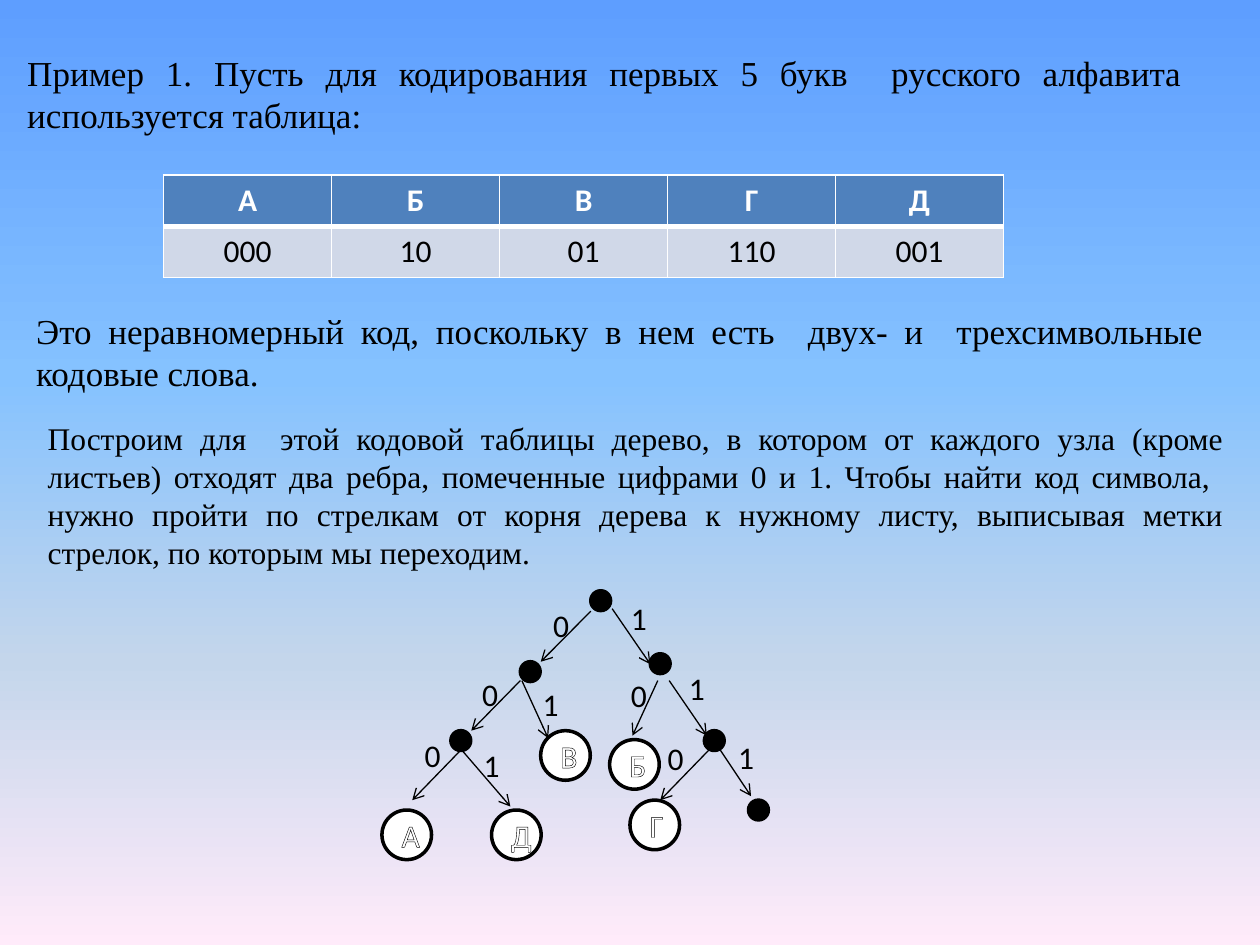
from pptx import Presentation
from pptx.dml.color import RGBColor
from pptx.enum.shapes import MSO_CONNECTOR, MSO_SHAPE
from pptx.enum.text import MSO_ANCHOR, MSO_AUTO_SIZE, PP_ALIGN
from pptx.oxml.ns import qn
from pptx.oxml.xmlchemy import OxmlElement
from pptx.util import Cm, Pt

ELLIPSE = MSO_SHAPE.OVAL
STRAIGHT = MSO_CONNECTOR.STRAIGHT
MIDDLE = MSO_ANCHOR.MIDDLE
FIT_SHAPE = MSO_AUTO_SIZE.SHAPE_TO_FIT_TEXT
LEFT, CENTER, JUSTIFY = PP_ALIGN.LEFT, PP_ALIGN.CENTER, PP_ALIGN.JUSTIFY

SERIF, SANS = "Times New Roman", "Calibri"
COLORS = {"ink": "000000", "paper": "FFFFFF", "header": "4F81BD", "row": "D0D8E8"}
SKY = [(0, "5E9EFF"), (40, "85C2FF"), (70, "C4D6EB"), (100, "FFEBFA")]

PARAGRAPHS = [
    ((0.3, 0.91, 24.21, 1.96), 20,
     "Пример 1. Пусть для кодирования первых 5 букв  русского алфавита  "
     "используется таблица:"),
    ((0.48, 6.12, 24.03, 1.96), 20,
     "Это неравномерный код, поскольку в нем есть  двух- и  трехсимвольные "
     "кодовые слова."),
    ((0.71, 8.33, 24.21, 3.33), 18,
     "Построим для  этой кодовой таблицы дерево, в котором от каждого узла "
     "(кроме листьев) отходят два ребра, помеченные цифрами 0 и 1. Чтобы найти "
     "код символа,  нужно пройти по стрелкам от корня дерева к нужному листу, "
     "выписывая метки стрелок, по которым мы переходим."),
]
CODES = {"А": "000", "Б": "10", "В": "01", "Г": "110", "Д": "001"}

DOT_SIZE, LEAF_SIZE = 0.4, 1
DOTS = [(4.21, 0), (2.79, 1.43), (5.41, 1.27), (1.39, 2.82), (6.5, 2.82), (7.39, 4.22)]
LEAVES = {"А": (0, 4.42), "Д": (2.21, 4.42), "В": (3.2, 2.82),
          "Б": (4.59, 3), "Г": (5, 4.22)}
EDGES = [
    ("0", (4.21, 0.41), (3.2, 1.43), (3.2, 0.18)),
    ("1", (4.64, 0.36), (5.41, 1.48), (4.77, 0.05)),
    ("0", (2.79, 1.81), (1.8, 2.82), (1.77, 1.58)),
    ("1", (2.82, 1.81), (3.35, 2.97), (2.99, 1.78)),
    ("0", (5.56, 1.81), (5.05, 2.92), (4.77, 1.6)),
    ("1", (5.79, 1.81), (6.55, 2.92), (5.94, 1.45)),
    ("0", (1.6, 3.2), (0.61, 4.22), (0.61, 2.8)),
    ("1", (1.6, 3.2), (2.59, 4.35), (1.8, 3)),
    ("0", (6.6, 3.2), (5.61, 4.22), (5.51, 2.87)),
    ("1", (6.7, 3.03), (7.44, 4.14), (6.93, 2.85)),
]


def rgb(name):
    """Return the palette colour called name."""
    return RGBColor.from_string(COLORS[name])


def solid_fill(color):
    """Return a solid fill element in a hex colour."""
    fill = OxmlElement("a:solidFill")
    clr = OxmlElement("a:srgbClr")
    clr.set("val", color)
    fill.append(clr)
    return fill


def solid_line(tag, width, color):
    """Return a line element of the given tag, width in points and colour."""
    ln = OxmlElement(tag)
    ln.set("w", str(Pt(width)))
    ln.append(solid_fill(color))
    return ln


def write(tf, text, size, font, color, align, bold=False):
    """Write one run into the first paragraph and return it."""
    p = tf.paragraphs[0]
    p.alignment = align
    r = p.add_run()
    r.text = text
    r.font.size, r.font.name, r.font.bold = Pt(size), font, bold
    r.font.color.rgb = rgb(color)
    return r


def add_text(slide, box, text, size, font, align, wrap=True):
    """Add a text box that grows with its text."""
    tf = slide.shapes.add_textbox(*map(Cm, box)).text_frame
    tf.word_wrap = wrap
    tf.auto_size = FIT_SHAPE
    write(tf, text, size, font, "ink", align)


def paint_background(slide):
    """Fill the slide background from sky blue down to pink."""
    fill = slide.background.fill
    fill.gradient()
    fill.gradient_angle = 270
    stops = next(slide.element.iter(qn("a:gsLst")))
    for stop in list(stops):
        stops.remove(stop)
    for pos, color in SKY:
        gs = OxmlElement("a:gs")
        gs.set("pos", str(pos * 1000))
        gs.append(solid_fill(color)[0])
        stops.append(gs)


def add_code_table(slide, box):
    """Add the table of letters and their codes."""
    rows = [list(CODES), list(CODES.values())]
    table = slide.shapes.add_table(len(rows), len(CODES), *map(Cm, box)).table
    for i, row in enumerate(rows):
        head = i == 0
        for j, text in enumerate(row):
            cell = table.cell(i, j)
            cell.fill.solid()
            cell.fill.fore_color.rgb = rgb("header" if head else "row")
            write(cell.text_frame, text, 18, SANS, "paper" if head else "ink",
                  CENTER, head)
            widths = {"L": 1, "R": 1, "T": 1 if head else 3, "B": 3 if head else 1}
            tc_pr = cell._tc.get_or_add_tcPr()
            for k, (side, width) in enumerate(widths.items()):
                tc_pr.insert(k, solid_line(f"a:ln{side}", width, COLORS["paper"]))


def add_circle(slide, x, y, size, color):
    """Add a circle with a black outline."""
    sp = slide.shapes.add_shape(ELLIPSE, Cm(x), Cm(y), Cm(size), Cm(size))
    sp.shadow.inherit = False
    sp.fill.solid()
    sp.fill.fore_color.rgb = rgb(color)
    sp.line.color.rgb = rgb("ink")
    sp.line.width = Pt(2)
    return sp


def add_arrow(slide, x1, y1, x2, y2):
    """Add a thin straight arrow."""
    cn = slide.shapes.add_connector(STRAIGHT, Cm(x1), Cm(y1), Cm(x2), Cm(y2))
    cn.line.color.rgb = rgb("ink")
    cn.line.width = Pt(0.75)
    tail = OxmlElement("a:tailEnd")
    tail.set("type", "arrow")
    cn.line._get_or_add_ln().append(tail)
    cn._element.spPr.append(OxmlElement("a:effectLst"))


def add_code_tree(slide, left, top):
    """Add the code tree with its top left corner at the given point."""
    for x, y in DOTS:
        add_circle(slide, left + x, top + y, DOT_SIZE, "ink")
    for _, (x1, y1), (x2, y2), _ in EDGES:
        add_arrow(slide, left + x1, top + y1, left + x2, top + y2)
    for letter, (x, y) in LEAVES.items():
        sp = add_circle(slide, left + x, top + y, LEAF_SIZE, "paper")
        tf = sp.text_frame
        tf.vertical_anchor = MIDDLE
        r = write(tf, letter, 18, SANS, "paper", CENTER)
        r._r.get_or_add_rPr().insert(0, solid_line("a:ln", 0.75, COLORS["ink"]))
    for digit, _, _, (x, y) in EDGES:
        add_text(slide, (left + x, top + y, 0.84, 1.02), digit, 18, SANS, LEFT, False)


def main():
    """Build the slide and save it."""
    prs = Presentation()
    prs.slide_width, prs.slide_height = Cm(25.4), Cm(19.05)
    slide = prs.slides.add_slide(prs.slide_layouts[6])
    paint_background(slide)
    for box, size, text in PARAGRAPHS:
        add_text(slide, box, text, size, SERIF, JUSTIFY)
    add_code_table(slide, (3.3, 3.53, 16.93, 2.06))
    add_code_tree(slide, 7.7, 11.91)
    prs.save("out.pptx")


if __name__ == "__main__":
    main()
